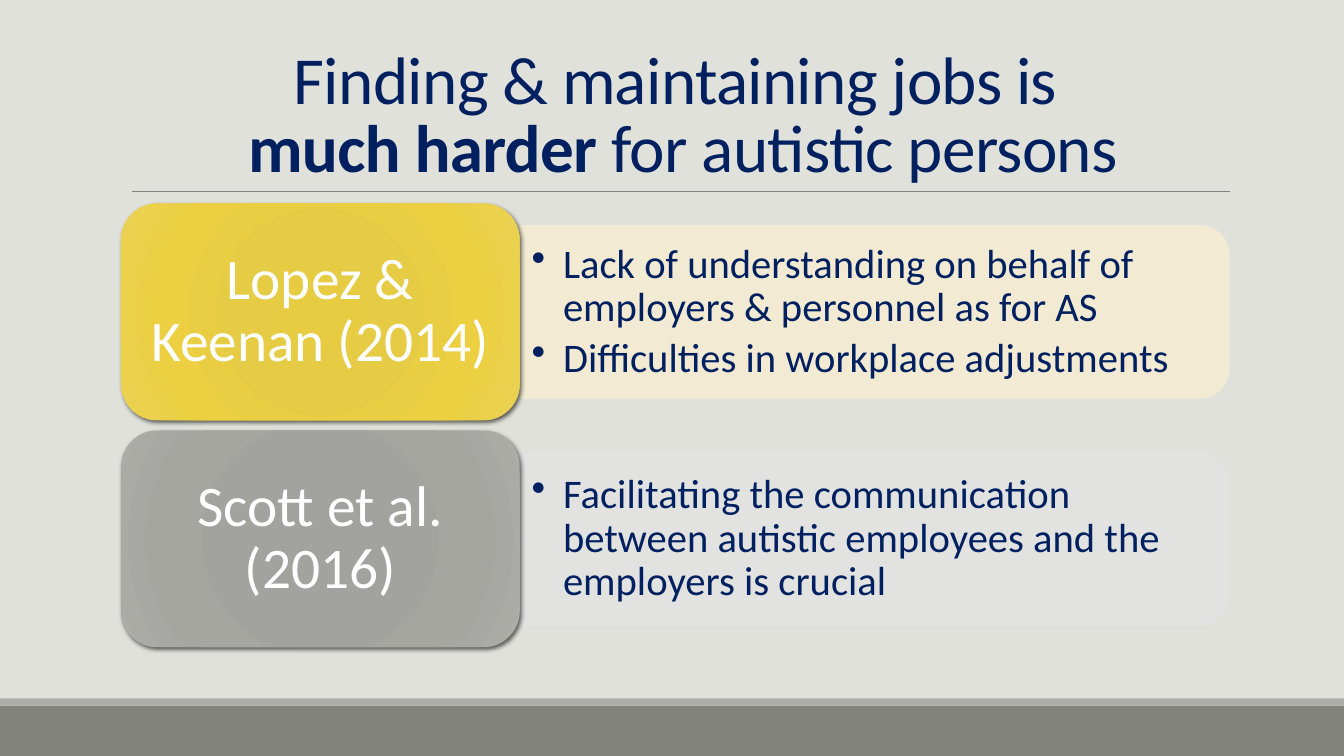
from lxml import etree
from pptx import Presentation
from pptx.dml.color import RGBColor
from pptx.enum.shapes import MSO_CONNECTOR, MSO_SHAPE
from pptx.enum.text import MSO_ANCHOR, PP_ALIGN
from pptx.oxml import parse_xml
from pptx.oxml.ns import qn
from pptx.util import Cm, Pt

RECTANGLE = MSO_SHAPE.RECTANGLE
ROUNDED = MSO_SHAPE.ROUNDED_RECTANGLE
ROUNDED_TOP = MSO_SHAPE.ROUND_2_SAME_RECTANGLE
STRAIGHT = MSO_CONNECTOR.STRAIGHT
MIDDLE, BOTTOM = MSO_ANCHOR.MIDDLE, MSO_ANCHOR.BOTTOM
LEFT, CENTER = PP_ALIGN.LEFT, PP_ALIGN.CENTER
NAMESPACE = 'xmlns:a="http://schemas.openxmlformats.org/drawingml/2006/main"'

CARD_LEFT, CARD_TOP, CARD_WIDTH, CARD_HEIGHT = 3.05, 5.13, 10.05, 5.46
CARD_PITCH = 5.72
PANEL_WIDTH, PANEL_HEIGHT = 17.88, 4.37
LIST_WIDTH, LIST_HEIGHT = 17.68, 3.94
STUDIES = [
    ("Lopez & Keenan (2014)",
     ["Lack of understanding on behalf of employers & personnel as for AS",
      "Difficulties in workplace adjustments"],
     "F4ECD2", [(0, "E7CB41"), (34, "E6CB45"), (70, "ECD042"), (100, "EAD153")]),
    ("Scott et al. (2016)",
     ["Facilitating the communication between autistic employees and the employers is crucial"],
     "E3E3E2", [(0, "A1A29C"), (34, "A2A39E"), (70, "A5A6A0"), (100, "ACADA8")]),
]


def color(value):
    return RGBColor.from_string(value)


class SlideBuilder:
    font = "Calibri"
    navy = "002060"

    def __init__(self, page, background):
        self.page = page
        page.background.fill.solid()
        page.background.fill.fore_color.rgb = color(background)

    def shape(self, kind, left, top, width, height, fill):
        shape = self.page.shapes.add_shape(kind, Cm(left), Cm(top), Cm(width), Cm(height))
        shape.shadow.inherit = False
        shape.fill.solid()
        shape.fill.fore_color.rgb = color(fill)
        shape.line.fill.background()
        return shape

    def rule(self, left, right, top, stroke):
        line = self.page.shapes.add_connector(STRAIGHT, Cm(left), Cm(top), Cm(right), Cm(top))
        line.line.color.rgb = color(stroke)
        line.line.width = Pt(0.5)
        etree.SubElement(line._element.spPr, qn("a:effectLst"))

    def frame(self, shape, anchor, side, edge):
        frame = shape.text_frame
        frame.word_wrap = True
        frame.vertical_anchor = anchor
        frame.margin_left = frame.margin_right = Cm(side)
        frame.margin_top = frame.margin_bottom = Cm(edge)
        return frame

    def text_box(self, left, top, width, height, anchor, side, edge):
        box = self.page.shapes.add_textbox(Cm(left), Cm(top), Cm(width), Cm(height))
        return self.frame(box, anchor, side, edge)

    def format(self, para, size, fill, align, spacing):
        para.alignment = align
        para.line_spacing = spacing
        for span in para.runs:
            span.font.name = self.font
            span.font.size = Pt(size)
            span.font.color.rgb = color(fill)

    def title(self, first, strong, rest):
        frame = self.text_box(3.05, 0.79, 27.94, 4.04, BOTTOM, 0.25, 0.13)
        para = frame.paragraphs[0]
        para.text = first
        para.add_run().text = strong
        para.add_run().text = rest
        self.format(para, 48, self.navy, CENTER, 0.85)
        for span in para.runs:
            span.font.bold = span.text == strong
            span.font._element.set("spc", "-50")

    def panel(self, left, middle, fill):
        shape = self.shape(ROUNDED_TOP, left + (PANEL_WIDTH - PANEL_HEIGHT) / 2,
                           middle - PANEL_WIDTH / 2, PANEL_HEIGHT, PANEL_WIDTH, fill)
        shape.rotation = 90
        tint = shape.fill._xPr.find(qn("a:solidFill"))[0]
        etree.SubElement(tint, qn("a:alpha"), val="90000")

    def bullets(self, left, middle, items):
        frame = self.text_box(left, middle - LIST_HEIGHT / 2, LIST_WIDTH, LIST_HEIGHT,
                              MIDDLE, 0.3, 0.15)
        frame.text = "\n".join(items)
        for para in frame.paragraphs:
            self.format(para, 29, self.navy, LEFT, 0.9)
            para.space_after = Pt(4.5)
            properties = para._p.get_or_add_pPr()
            properties.set("marL", str(Cm(0.79)))
            properties.set("indent", str(Cm(-0.79)))
            etree.SubElement(properties, qn("a:buChar"), char="•")

    def card(self, top, label, stops):
        shape = self.shape(ROUNDED, CARD_LEFT, top, CARD_WIDTH, CARD_HEIGHT, stops[0][1])
        marks = "".join(f'<a:gs pos="{place * 1000}"><a:srgbClr val="{value}"/></a:gs>'
                        for place, value in stops)
        gradient = parse_xml(
            f'<a:gradFill {NAMESPACE} rotWithShape="1"><a:gsLst>{marks}</a:gsLst>'
            '<a:path path="circle"><a:fillToRect l="100000" t="100000" r="100000" b="100000"/>'
            '</a:path></a:gradFill>')
        properties = shape._element.spPr
        properties.replace(properties.find(qn("a:solidFill")), gradient)
        properties.find(qn("a:effectLst")).append(parse_xml(
            f'<a:outerShdw {NAMESPACE} blurRad="{Pt(3)}" dist="{Pt(2)}" dir="2700000" '
            'rotWithShape="0"><a:srgbClr val="000000"><a:alpha val="60000"/></a:srgbClr>'
            '</a:outerShdw>'))
        frame = self.frame(shape, MIDDLE, 0.43, 0.23)
        frame.text = label
        self.format(frame.paragraphs[0], 41, "FFFFFF", CENTER, 0.9)


def main():
    deck = Presentation()
    deck.slide_width, deck.slide_height = Cm(33.87), Cm(19.05)
    builder = SlideBuilder(deck.slides.add_slide(deck.slide_layouts[6]), "E1E1DB")
    builder.shape(RECTANGLE, 0, 17.78, 33.87, 1.27, "82847C")
    builder.shape(RECTANGLE, 0, 17.6, 33.87, 0.18, "ACADA8")
    builder.rule(3.33, 31, 4.82, "808080")
    builder.title("Finding & maintaining jobs is\v ", "much harder", " for autistic persons")
    for index, (label, items, tint, stops) in enumerate(STUDIES):
        top = CARD_TOP + index * CARD_PITCH
        middle = top + CARD_HEIGHT / 2
        panel_left = CARD_LEFT + CARD_WIDTH
        builder.panel(panel_left, middle, tint)
        builder.bullets(panel_left, middle, items)
        builder.card(top, label, stops)
    deck.save("out.pptx")


if __name__ == "__main__":
    main()
